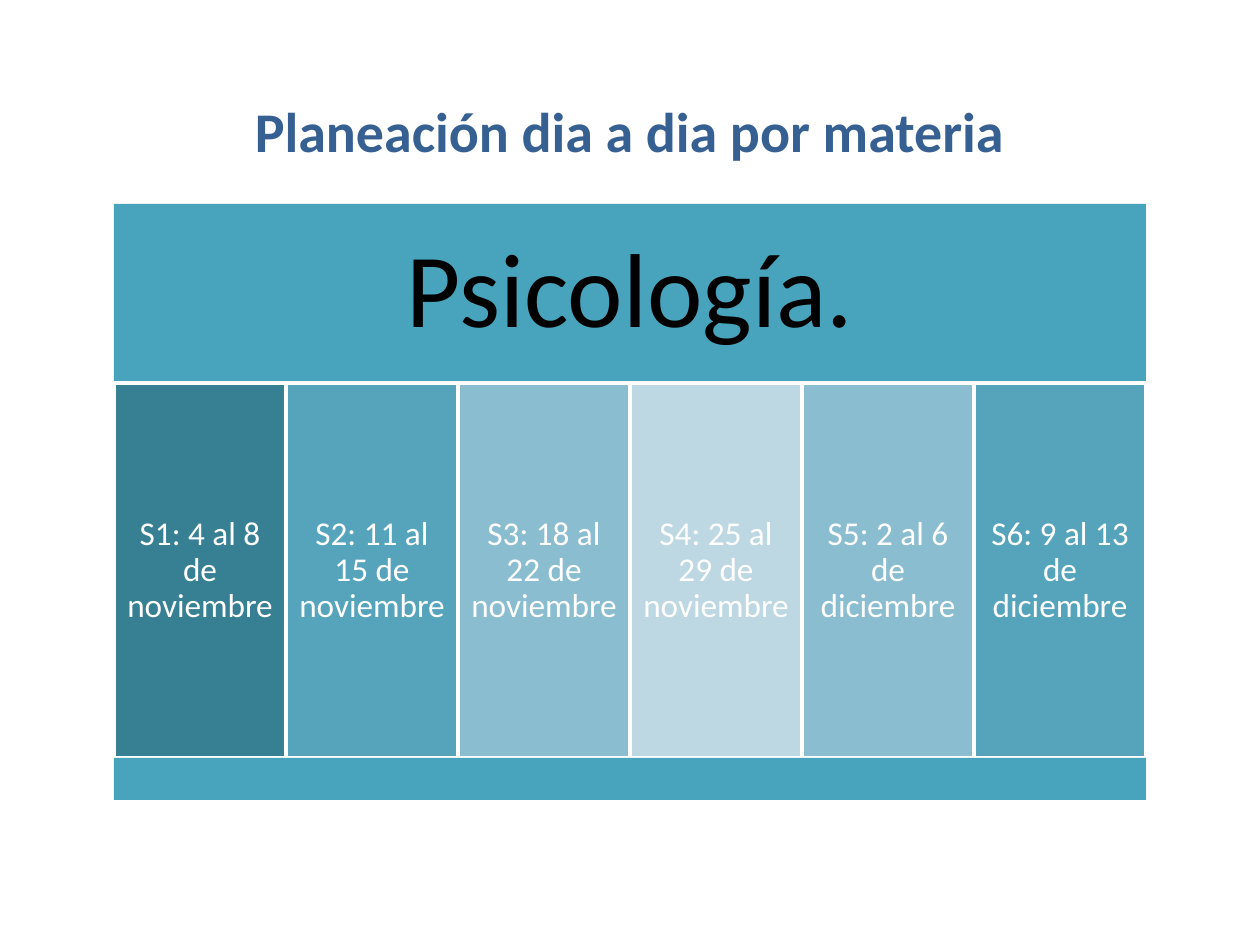
"""Build a one-slide weekly plan for a school subject."""
from dataclasses import dataclass

import pptx
import pptx.dml.color
import pptx.enum.shapes
import pptx.enum.text
import pptx.slide
import pptx.util

EMU_PER_PX = 914400 / 126
LEFT, WIDTH = 114, 1032
HEADER_TOP, HEADER_HEIGHT = 204, 179
WEEK_HEIGHT, FOOTER_HEIGHT = 375, 42


@dataclass(frozen=True)
class Theme:
    font: str = "Calibri"
    white: str = "FFFFFF"
    black: str = "000000"
    title: str = "376092"
    band: str = "48A4BD"
    week_fills: tuple[str, ...] = ("377F92", "56A4BC", "8ABDCF", "BED8E3", "8ABDCF", "56A4BC")
    title_size: int = 32
    subject_size: int = 60
    week_size: int = 19
    border: int = 2


@dataclass(frozen=True)
class Block:
    left: int
    top: int
    width: int
    height: int
    fill: str
    line: str | None = None
    rounded: bool = False


THEME = Theme()
WEEKS = (
    "S1: 4 al 8 de noviembre",
    "S2: 11 al 15 de noviembre",
    "S3: 18 al 22 de noviembre",
    "S4: 25 al 29 de noviembre",
    "S5: 2 al 6 de diciembre",
    "S6: 9 al 13 de diciembre",
)


def px(length: int) -> pptx.util.Emu:
    return pptx.util.Emu(round(length * EMU_PER_PX))


def color(value: str) -> pptx.dml.color.RGBColor:
    return pptx.dml.color.RGBColor.from_string(value)


def draw_block(page: pptx.slide.Slide, block: Block):
    kinds = pptx.enum.shapes.MSO_SHAPE
    kind = kinds.ROUNDED_RECTANGLE if block.rounded else kinds.RECTANGLE
    box = page.shapes.add_shape(
        kind, px(block.left), px(block.top), px(block.width), px(block.height)
    )
    box.shadow.inherit = False
    box.fill.solid()
    box.fill.fore_color.rgb = color(block.fill)
    if block.line:
        box.line.color.rgb = color(block.line)
        box.line.width = pptx.util.Pt(THEME.border)
    else:
        box.line.fill.background()
    return box


def write_text(
    box, text: str, *, size: int, ink: str, bold: bool = False, inset: int = 10, spacing: float = 0.9
) -> None:
    frame = box.text_frame
    frame.word_wrap = True
    frame.vertical_anchor = pptx.enum.text.MSO_ANCHOR.MIDDLE
    frame.margin_left = frame.margin_right = px(inset)
    frame.margin_top = frame.margin_bottom = px(inset)
    para = frame.paragraphs[0]
    para.alignment = pptx.enum.text.PP_ALIGN.CENTER
    para.line_spacing = spacing
    span = para.add_run()
    span.text = text
    span.font.name = THEME.font
    span.font.size = pptx.util.Pt(size)
    span.font.bold = bold
    span.font.color.rgb = color(ink)


def main() -> None:
    deck = pptx.Presentation()
    deck.slide_width, deck.slide_height = px(1260), px(945)
    page = deck.slides.add_slide(deck.slide_layouts[6])

    title = draw_block(page, Block(LEFT, 86, WIDTH, 89, THEME.white, rounded=True))
    write_text(
        title, "Planeación dia a dia por materia",
        size=THEME.title_size, ink=THEME.title, bold=True, spacing=1.0,
    )

    header = draw_block(page, Block(LEFT, HEADER_TOP, WIDTH, HEADER_HEIGHT, THEME.band))
    write_text(header, "Psicología.", size=THEME.subject_size, ink=THEME.black, inset=32)

    week_top = HEADER_TOP + HEADER_HEIGHT
    week_width = WIDTH // len(WEEKS)
    for index, (label, fill) in enumerate(zip(WEEKS, THEME.week_fills)):
        left = LEFT + index * week_width
        week = draw_block(
            page, Block(left, week_top, week_width, WEEK_HEIGHT, fill, line=THEME.white)
        )
        write_text(week, label, size=THEME.week_size, ink=THEME.white)

    draw_block(page, Block(LEFT, week_top + WEEK_HEIGHT, WIDTH, FOOTER_HEIGHT, THEME.band))
    deck.save("out.pptx")


if __name__ == "__main__":
    main()
